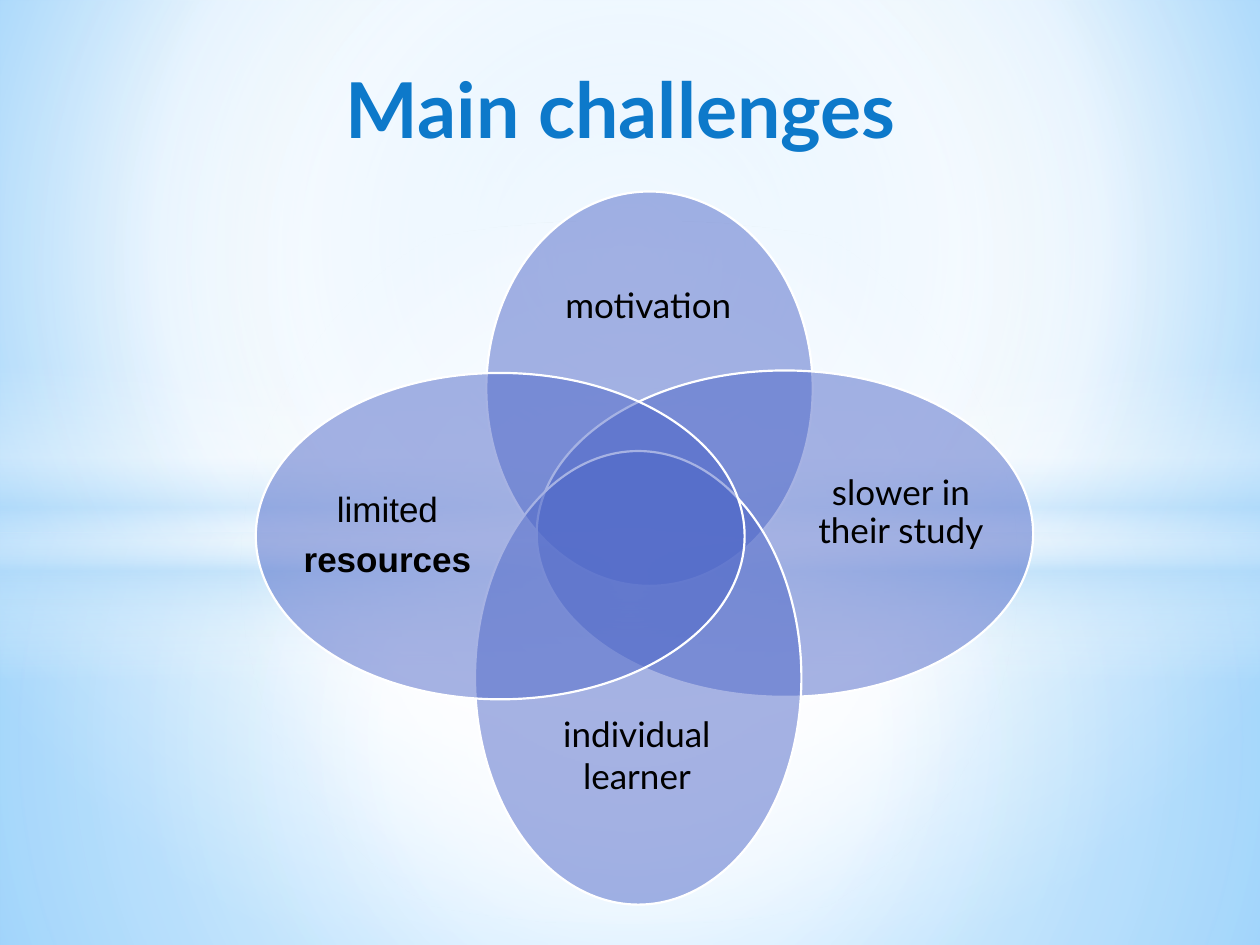
from lxml import etree
from pptx import Presentation
from pptx.dml.color import RGBColor
from pptx.enum.shapes import MSO_SHAPE
from pptx.enum.text import MSO_ANCHOR, PP_ALIGN
from pptx.oxml.ns import qn
from pptx.util import Inches, Pt

RECTANGLE, OVAL = MSO_SHAPE.RECTANGLE, MSO_SHAPE.OVAL
CENTER = PP_ALIGN.CENTER
TOP, MIDDLE = MSO_ANCHOR.TOP, MSO_ANCHOR.MIDDLE

THEME = {
    "title": "0D79CA", "text": "000000", "petal": "4E67C8", "outline": "FFFFFF",
    "font": "Lato", "alternate_font": "Arial",
    "title_size": 44, "label_size": 20, "outline_width": 1.25,
    "petal_opacity": 50, "paragraph_gap": 7,
}

TITLE = ("Main challenges", (1.85, 0.44, 6.16, 0.96))

# Gradient stops are (position %, colour, opacity %).
# The focus is the inset of the centre from left, top, right, bottom, in %.
MIDPOINT = (50, 50, 50, 50)
BACKGROUND = ([(0, "9ED5FF", 100), (60, "FFFFFF", 100), (100, "5BB9FF", 100)],
              (20, 10, 20, 60))
GLOWS = [
    (RECTANGLE, (0, 4.23, 10, 3.27),
     [(0, "FFFFFF", 91), (37, "FFFFFF", 76), (100, "B4DCFA", 79)], MIDPOINT),
    (RECTANGLE, (0, 0, 10, 4.23),
     [(0, "FFFFFF", 89), (48, "FFFFFF", 62), (100, "B4DCFA", 79)], MIDPOINT),
    (RECTANGLE, (0, 2.9, 10, 2.5),
     [(0, "FFFFFF", 0), (29, "FFFFFF", 30), (45, "B4DCFA", 40),
      (55, "FFFFFF", 26), (65, "B4DCFA", 60), (100, "FFFFFF", 0)], None),
    (OVAL, (0, 1.75, 10, 5.58),
     [(0, "FFFFFF", 100), (54, "FFFFFF", 0)], MIDPOINT),
]

# Each petal: ellipse box, label box, line spacing, font, paragraphs (text, bold)
PETALS = [
    ((3.86, 1.52, 2.59, 3.13), (4.15, 1.94, 1.99, 0.99), 0.9, "font",
     [("motivation", False)]),
    ((4.26, 2.94, 3.94, 2.59), (6.39, 3.24, 1.52, 1.66), 0.9, "font",
     [("slower in their study", False)]),
    ((3.77, 3.58, 2.59, 3.6), (4.06, 5.55, 1.99, 0.88), 1.0, "font",
     [("individual learner", False)]),
    ((2.03, 2.96, 3.88, 2.59), (2.33, 3.26, 1.49, 1.99), 0.9, "alternate_font",
     [("limited", False), ("resources", True)]),
]


def inches(box):
    return [Inches(value) for value in box]


def add_opacity(color_element, percent):
    etree.SubElement(color_element, qn("a:alpha"), val=str(percent * 1000))


def replace_with_gradient(properties, stops, focus):
    """Swap the solid fill for a circular gradient, or a vertical one without focus."""
    gradient = etree.Element(qn("a:gradFill"), rotWithShape="1")
    stop_list = etree.SubElement(gradient, qn("a:gsLst"))
    for position, color, opacity in stops:
        stop = etree.SubElement(stop_list, qn("a:gs"), pos=str(position * 1000))
        color_element = etree.SubElement(stop, qn("a:srgbClr"), val=color)
        if opacity < 100:
            add_opacity(color_element, opacity)
    if focus:
        circle = etree.SubElement(gradient, qn("a:path"), {"path": "circle"})
        insets = {side: str(value * 1000) for side, value in zip("ltrb", focus)}
        etree.SubElement(circle, qn("a:fillToRect"), insets)
    else:
        etree.SubElement(gradient, qn("a:lin"), ang="5400000", scaled="0")
    properties.replace(properties.find(qn("a:solidFill")), gradient)


def add_filled_shape(slide, kind, box, color):
    shape = slide.shapes.add_shape(kind, *inches(box))
    shape.shadow.inherit = False
    shape.fill.solid()
    shape.fill.fore_color.rgb = RGBColor.from_string(color)
    return shape


def add_glow(slide, kind, box, stops, focus):
    shape = add_filled_shape(slide, kind, box, THEME["outline"])
    shape.line.fill.background()
    replace_with_gradient(shape.element.spPr, stops, focus)


def add_petal(slide, box):
    shape = add_filled_shape(slide, OVAL, box, THEME["petal"])
    add_opacity(shape.element.spPr.find(qn("a:solidFill"))[0], THEME["petal_opacity"])
    shape.line.color.rgb = RGBColor.from_string(THEME["outline"])
    shape.line.width = Pt(THEME["outline_width"])


def add_run(paragraph, text, font, size, color, bold):
    paragraph.alignment = CENTER
    run = paragraph.add_run()
    run.text = text
    run.font.name = font
    run.font.size = Pt(size)
    run.font.bold = bold
    run.font.color.rgb = RGBColor.from_string(color)


def add_label(slide, box, line_spacing, font, paragraphs):
    frame = slide.shapes.add_textbox(*inches(box)).text_frame
    frame.word_wrap = True
    frame.vertical_anchor = MIDDLE
    frame.margin_left = frame.margin_top = frame.margin_right = frame.margin_bottom = 0
    for index, (text, bold) in enumerate(paragraphs):
        paragraph = frame.add_paragraph() if index else frame.paragraphs[0]
        paragraph.line_spacing = line_spacing
        paragraph.space_after = Pt(THEME["paragraph_gap"])
        add_run(paragraph, text, THEME[font], THEME["label_size"], THEME["text"], bold)


def fill_title(slide):
    text, box = TITLE
    title = slide.shapes.title
    title.left, title.top, title.width, title.height = inches(box)
    title.text_frame.vertical_anchor = TOP
    add_run(title.text_frame.paragraphs[0], text, THEME["font"],
            THEME["title_size"], THEME["title"], True)


def main():
    presentation = Presentation()
    presentation.slide_width, presentation.slide_height = Inches(10), Inches(7.5)
    title_only = presentation.slide_layouts[5]
    slide = presentation.slides.add_slide(title_only)

    slide.background.fill.solid()
    slide.background.fill.fore_color.rgb = RGBColor.from_string(THEME["outline"])
    replace_with_gradient(slide.element.find(".//" + qn("p:bgPr")), *BACKGROUND)
    for glow in GLOWS:
        add_glow(slide, *glow)

    fill_title(slide)
    title_element = slide.shapes.title.element
    title_element.getparent().append(title_element)  # in front of the glows

    for petal_box, *label in PETALS:
        add_petal(slide, petal_box)
        add_label(slide, *label)
    presentation.save("out.pptx")


if __name__ == "__main__":
    main()
